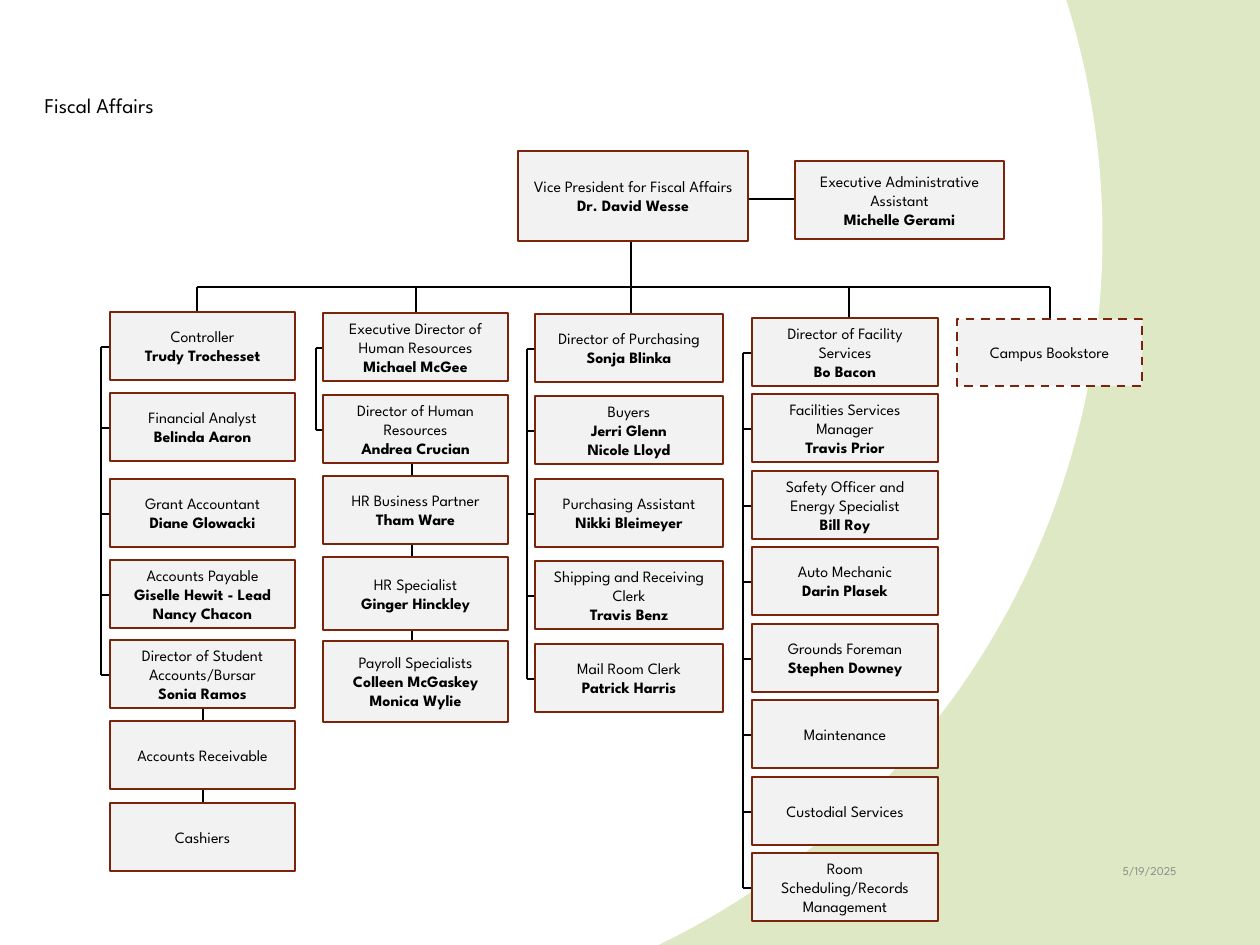
from lxml.etree import SubElement
from pptx import Presentation
from pptx.dml.color import RGBColor
from pptx.enum.dml import MSO_LINE
from pptx.enum.shapes import MSO_CONNECTOR, MSO_SHAPE
from pptx.enum.text import MSO_ANCHOR as ANCHOR, PP_ALIGN as ALIGN
from pptx.oxml import parse_xml
from pptx.oxml.ns import nsdecls, qn
from pptx.util import Pt

PX = 914400 / 126
FONT = "League Spartan"
BLACK, GRAY, RUST, PALE = "000000", "8C8C8C", "7A240C", "F2F2F2"
WHITE, GREEN = "FFFFFF", "DFE8C4"
BOX_HEIGHT = 68
TICK = 50


def emu(*lengths):
    return [round(length * PX) for length in lengths]


def rgb(color):
    return RGBColor.from_string(color)


def add_run(paragraph, text, size, color=BLACK, bold=False):
    run = paragraph.add_run()
    run.text = text
    run.font.name = FONT
    run.font.size = Pt(size)
    run.font.bold = bold
    run.font.color.rgb = rgb(color)


def add_background(slide):
    """White disc centred in the upper left, green beyond its edge."""
    slide.background.fill.solid()
    properties = slide.element.xpath(".//p:bgPr")[0]
    gradient = parse_xml(
        f'<a:gradFill {nsdecls("a")} rotWithShape="1"><a:gsLst>'
        f'<a:gs pos="100000"><a:srgbClr val="{WHITE}"/></a:gs>'
        f'<a:gs pos="100000"><a:srgbClr val="{GREEN}"/></a:gs></a:gsLst>'
        '<a:path path="circle">'
        '<a:fillToRect l="50000" t="50000" r="100000" b="100000"/>'
        "</a:path></a:gradFill>")
    properties.replace(properties.find(qn("a:solidFill")), gradient)


def add_title(slide, box, text):
    title = slide.shapes.title
    title.left, title.top, title.width, title.height = emu(*box)
    frame = title.text_frame
    frame.word_wrap = False
    frame.vertical_anchor = ANCHOR.TOP
    paragraph = frame.paragraphs[0]
    paragraph.alignment = ALIGN.LEFT
    add_run(paragraph, text, 12)


def add_date(slide, box, text):
    frame = slide.shapes.add_textbox(*emu(*box)).text_frame
    frame.word_wrap = True
    frame.vertical_anchor = ANCHOR.MIDDLE
    paragraph = frame.paragraphs[0]
    paragraph.alignment = ALIGN.RIGHT
    add_run(paragraph, text, 6.8, GRAY)


def add_position(slide, box, role, *people, dashed=False):
    """Box with a role and the people who hold it in bold."""
    shape = slide.shapes.add_shape(MSO_SHAPE.RECTANGLE, *emu(*box))
    shape.shadow.inherit = False
    shape.fill.solid()
    shape.fill.fore_color.rgb = rgb(PALE)
    shape.line.color.rgb = rgb(RUST)
    shape.line.width = Pt(1.25)
    if dashed:
        shape.line.dash_style = MSO_LINE.DASH
    frame = shape.text_frame
    frame.word_wrap = True
    frame.vertical_anchor = ANCHOR.MIDDLE
    for index, text in enumerate((role, *people)):
        paragraph = frame.add_paragraph() if index else frame.paragraphs[0]
        paragraph.alignment = ALIGN.CENTER
        add_run(paragraph, text, 9, bold=index > 0)


def add_line(slide, x1, y1, x2, y2):
    line = slide.shapes.add_connector(MSO_CONNECTOR.STRAIGHT,
                                      *emu(x1, y1, x2, y2))
    line.line.color.rgb = rgb(BLACK)
    line.line.width = Pt(0.75)
    SubElement(line.element.spPr, qn("a:effectLst"))


def add_bus(slide, y, drops, drop_end):
    """Horizontal line with drops that run on behind the boxes below."""
    add_line(slide, drops[0], y, drops[-1], y)
    for x in drops:
        add_line(slide, x, y, x, drop_end)


def add_branch(slide, left, width, tops, positions, spine, on_spine,
               chain=None, heights=None):
    """Column of boxes: the first on_spine hang off a spine at its left,
    and a chain (x, top, bottom) links lower ones from behind."""
    heights = heights or [BOX_HEIGHT] * len(tops)
    ticks = [top + BOX_HEIGHT // 2 + 1 for top in tops[:on_spine]]
    add_line(slide, spine, ticks[0], spine, ticks[-1])
    for y in ticks:
        add_line(slide, spine, y, spine + TICK, y)
    if chain:
        x, top, bottom = chain
        add_line(slide, x, top, x, bottom)
    for top, height, position in zip(tops, heights, positions):
        add_position(slide, (left, top, width, height), *position)


def add_leadership(slide):
    """Vice president with the assistant at the side and the trunk below."""
    add_line(slide, 735, 199, 808, 199)
    add_line(slide, 631, 234, 631, 335)
    add_position(slide, (518, 151, 230, 90),
                 "Vice President for Fiscal Affairs", "Dr. David Wesse")
    add_position(slide, (795, 161, 209, 78),
                 "Executive Administrative Assistant", "Michelle Gerami")


CONTROLLER = [
    ("Controller", "Trudy Trochesset"),
    ("Financial Analyst", "Belinda Aaron"),
    ("Grant Accountant", "Diane Glowacki"),
    ("Accounts Payable", "Giselle Hewit - Lead Nancy Chacon"),
    ("Director of Student Accounts/Bursar", "Sonia Ramos"),
    ("Accounts Receivable",), ("Cashiers",)]
HUMAN_RESOURCES = [
    ("Executive Director of Human Resources", "Michael McGee"),
    ("Director of Human Resources", "Andrea Crucian"),
    ("HR Business Partner", "Tham Ware"),
    ("HR Specialist", "Ginger Hinckley"),
    ("Payroll Specialists", "Colleen McGaskey", "Monica Wylie")]
PURCHASING = [
    ("Director of Purchasing", "Sonja Blinka"),
    ("Buyers", "Jerri Glenn", "Nicole Lloyd"),
    ("Purchasing Assistant", "Nikki Bleimeyer"),
    ("Shipping and Receiving Clerk", "Travis Benz"),
    ("Mail Room Clerk", "Patrick Harris")]
FACILITIES = [
    ("Director of Facility Services", "Bo Bacon"),
    ("Facilities Services Manager", "Travis Prior"),
    ("Safety Officer and Energy Specialist", "Bill Roy"),
    ("Auto Mechanic", "Darin Plasek"),
    ("Grounds Foreman", "Stephen Downey"),
    ("Maintenance",), ("Custodial Services",),
    ("Room Scheduling/Records Management",)]


def main():
    presentation = Presentation()
    presentation.slide_width, presentation.slide_height = emu(1260, 945)
    slide = presentation.slides.add_slide(presentation.slide_layouts[5])
    add_background(slide)
    add_title(slide, (32, 86, 149, 38), "Fiscal Affairs")
    add_date(slide, (1071, 845, 118, 52), "5/19/2025")

    add_bus(slide, 287, [197, 416, 849, 1050], 365)
    add_leadership(slide)
    add_branch(slide, 110, 185, [312, 393, 479, 560, 640, 721, 803],
               CONTROLLER, spine=101, on_spine=5, chain=(203, 709, 872))
    add_branch(slide, 323, 185, [313, 395, 476, 557, 641],
               HUMAN_RESOURCES, spine=316, on_spine=2, chain=(412, 402, 717),
               heights=[68, 68, 68, 73, 81])
    add_branch(slide, 535, 188, [314 + 165 * row // 2 for row in range(5)],
               PURCHASING, spine=527, on_spine=5)
    add_branch(slide, 752, 186, [318 + 153 * row // 2 for row in range(8)],
               FACILITIES, spine=743, on_spine=8)
    add_position(slide, (957, 319, 185, 67), "Campus Bookstore", dashed=True)
    presentation.save("out.pptx")


if __name__ == "__main__":
    main()
